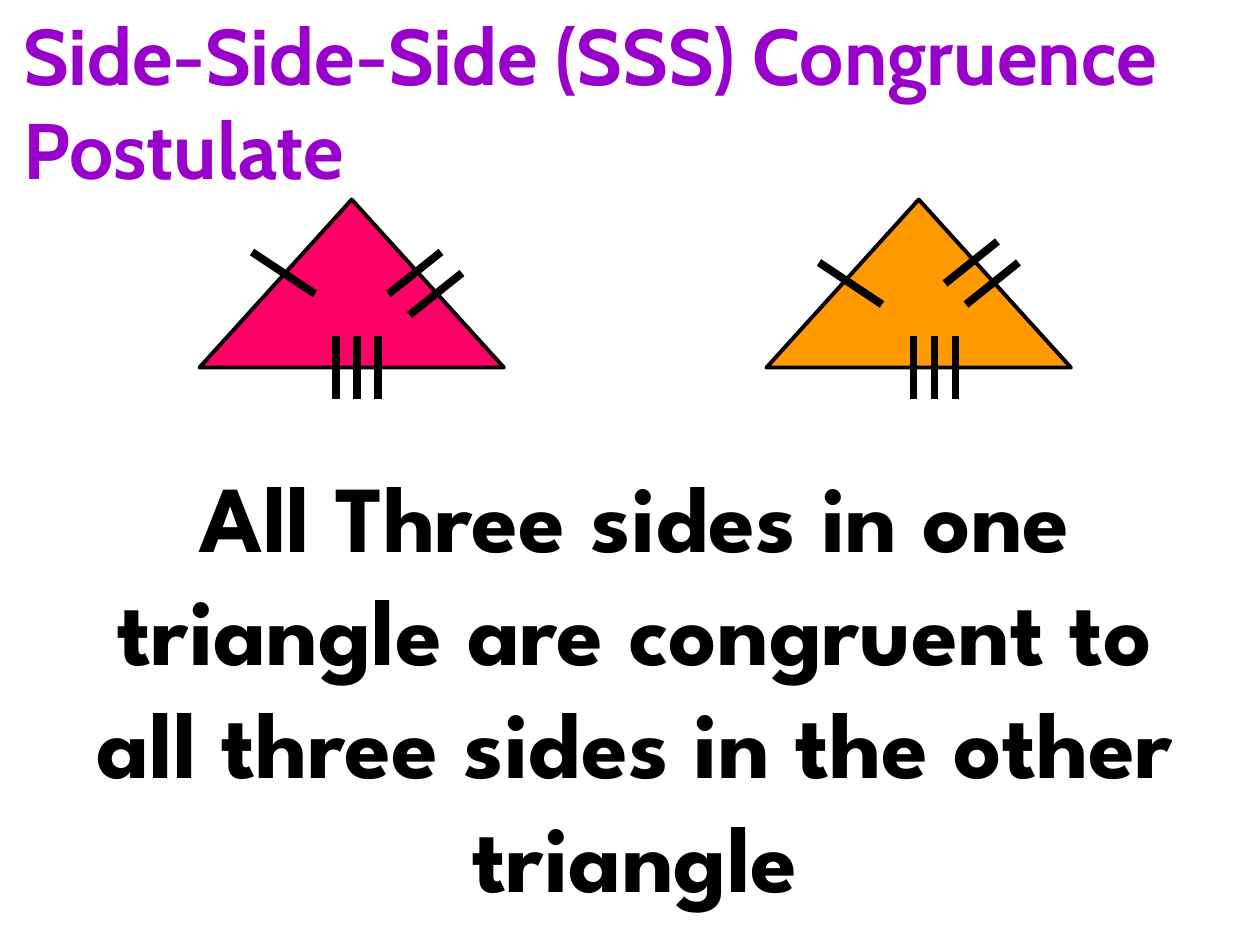
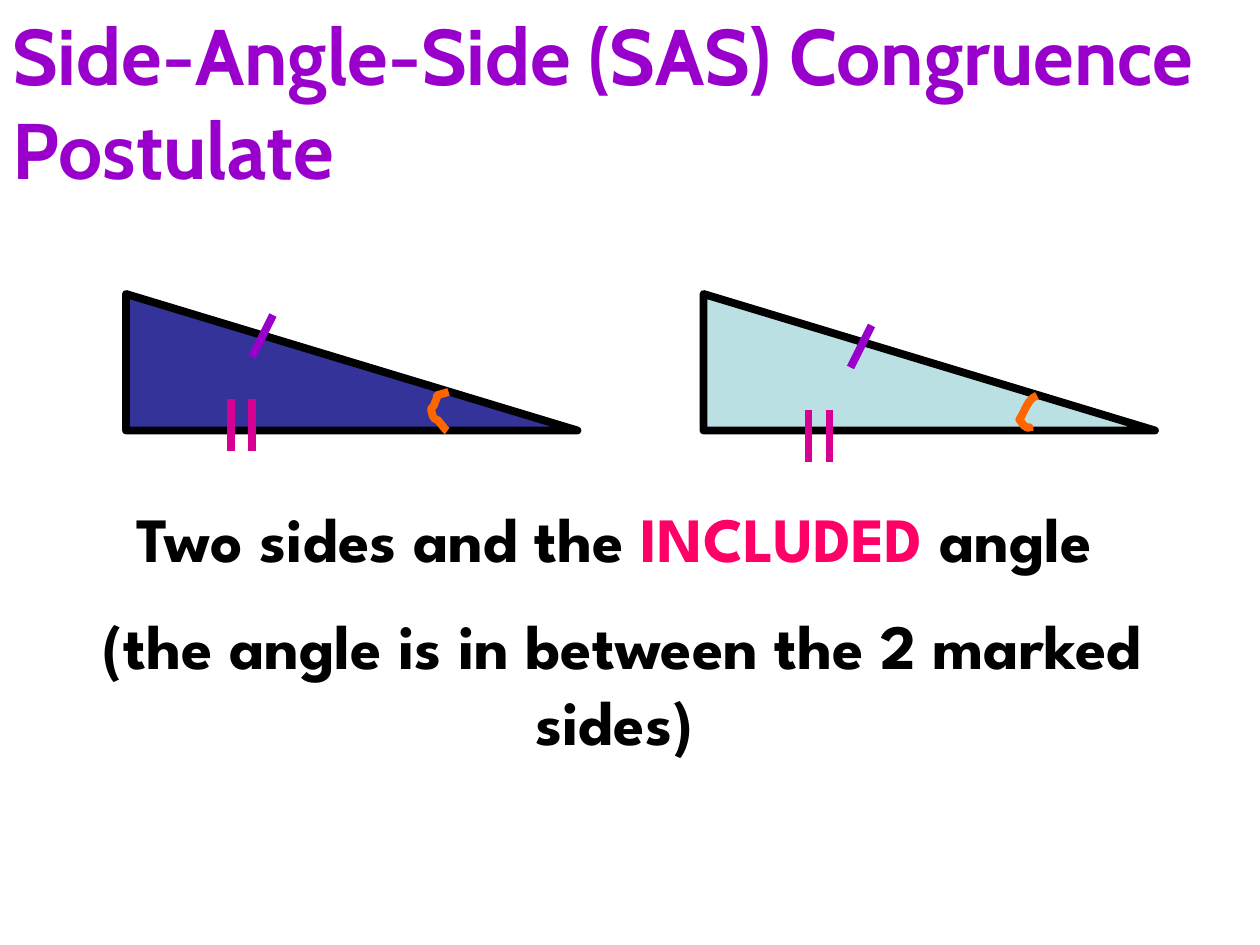
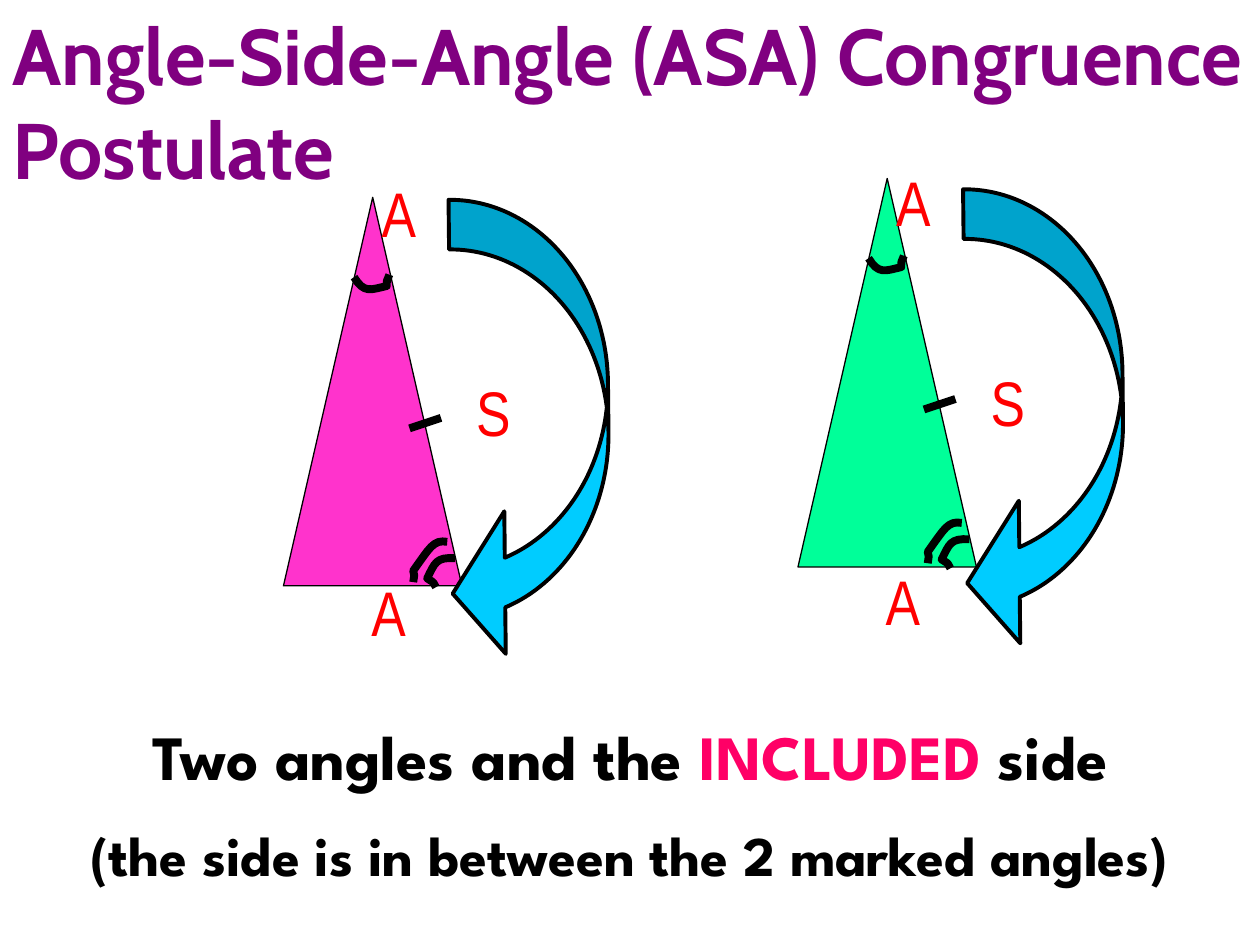
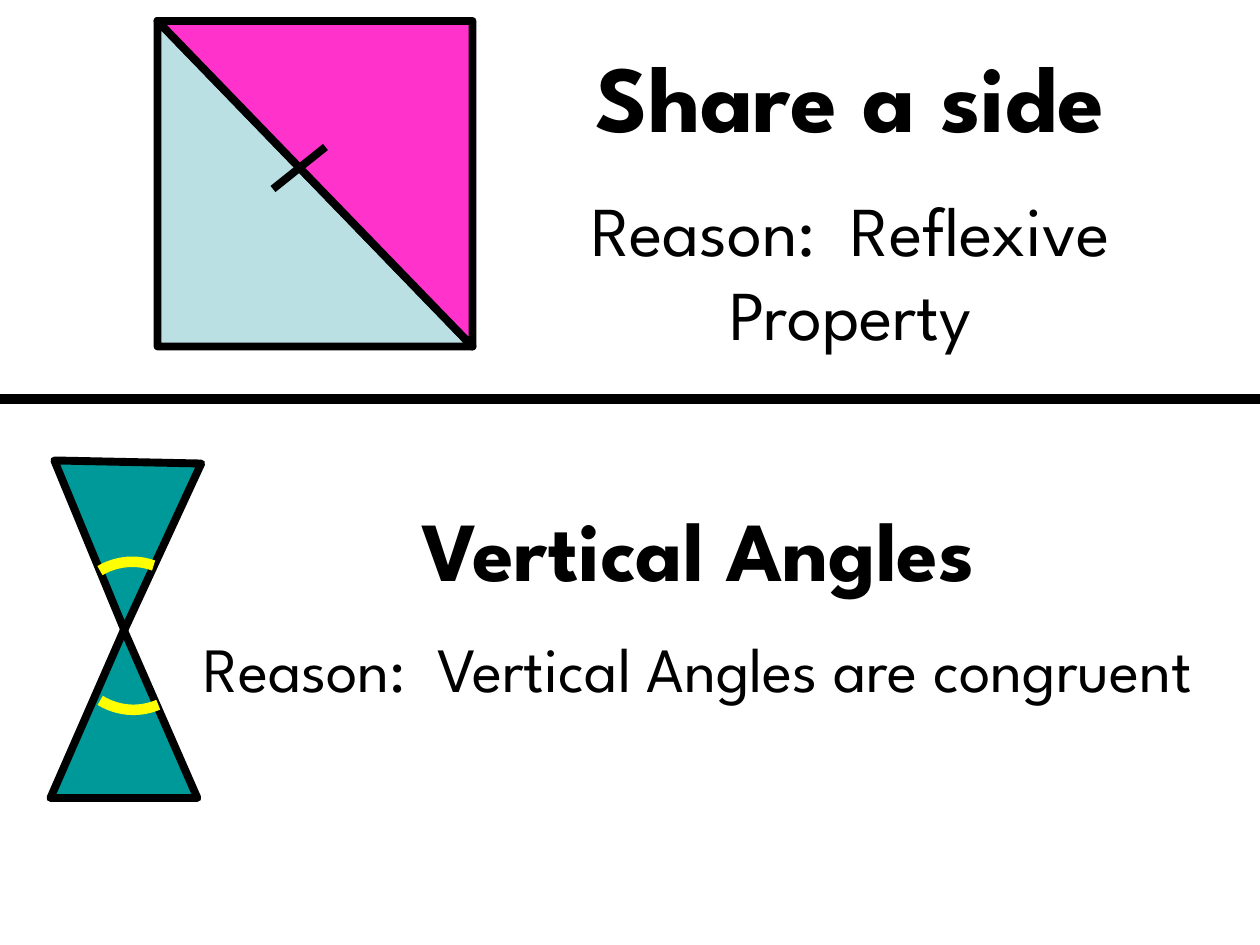
from dataclasses import dataclass

from lxml.etree import SubElement
from pptx import Presentation
from pptx.dml.color import RGBColor
from pptx.enum.shapes import MSO_CONNECTOR, MSO_SHAPE as Shape
from pptx.enum.text import MSO_ANCHOR as Anchor, MSO_AUTO_SIZE as AutoSize, PP_ALIGN as Align
from pptx.oxml import parse_xml
from pptx.oxml.ns import nsdecls, qn
from pptx.util import Inches, Pt

COLUMNS, ROWS = 120, 90  # the page grid: twelve cells to the inch
CURVE_STEPS = 8


@dataclass(frozen=True)
class Theme:
    ink: str = "000000"
    violet: str = "9900CC"
    purple: str = "800080"
    rose: str = "FF0066"
    amber: str = "FF9900"
    navy: str = "333399"
    ice: str = "BBE0E3"
    orange: str = "FF6600"
    magenta: str = "D60093"
    pink: str = "FF33CC"
    mint: str = "00FF99"
    sky: str = "00CCFF"
    red: str = "FF0000"
    teal: str = "009999"
    yellow: str = "FFFF00"
    title_font: str = "Cabin"
    body_font: str = "League Spartan"
    label_font: str = "Arial Narrow"
    title_size: float = 45
    huge: float = 54
    large: float = 48
    reason: float = 40
    body: float = 36
    small: float = 32
    hairline: float = 0.75
    outline: float = 2.25
    mark: float = 4.5
    heavy: float = 6


T = Theme()

# ---- Content: frames are (column, row, width, height) in grid cells ----
# A paragraph is (size, bold, [(words, colour), ...])
SSS = {
    "title": ("Side-Side-Side (SSS) Congruence Postulate", T.violet, (1, 0, 118, 19.2)),
    "text_frame": (5, 43, 111, 44.9),
    "text": [(T.huge, True, [("All Three sides in one triangle are congruent "
                              "to all three sides in the other triangle", T.ink)])],
    "triangles": [((19, 19, 29, 16), T.rose), ((73, 19, 29, 16), T.amber)],
    # start, reach, number of ticks, step between ticks, colour
    "ticks": [
        ((24, 24), (6, 4), 1, (0, 0), T.ink), ((78, 25), (6, 4), 1, (0, 0), T.ink),
        ((95, 23), (-5, 4), 2, (2, 2), T.ink), ((42, 24), (-5, 4), 2, (2, 2), T.ink),
        ((87, 32), (0, 6), 3, (2, 0), T.ink), ((32, 32), (0, 6), 3, (2, 0), T.ink),
    ],
}
SAS = {
    "title": ("Side-Angle-Side (SAS) Congruence Postulate", T.violet, (0, 0, 120, 19.2)),
    "text_frame": (7, 47, 103, 26.6),
    "text": [
        (T.body, True, [("Two sides and the ", T.ink), ("INCLUDED", T.rose), (" angle", T.ink)]),
        (T.body, True, [(" (the angle is in between the 2 marked sides)", T.ink)]),
    ],
    "triangles": [((12, 28, 43, 13), T.navy), ((67, 28, 43, 13), T.ice)],
    "ticks": [
        ((24, 34), (2, -4), 1, (0, 0), T.violet), ((81, 35), (2, -4), 1, (0, 0), T.violet),
        ((22, 38), (0, 5), 2, (2, 0), T.magenta), ((77, 39), (0, 5), 2, (2, 0), T.magenta),
    ],
    # Angle marks in inches: a start, then two controls and an end per bend
    "angles": [
        [(3.56, 3.11), (3.42, 3.16), (3.5, 3.1), (3.45, 3.2), (3.45, 3.22), (3.43, 3.23),
         (3.42, 3.25), (3.43, 3.27), (3.43, 3.3), (3.44, 3.31), (3.45, 3.33), (3.47, 3.33),
         (3.48, 3.34), (3.49, 3.35), (3.53, 3.41), (3.55, 3.42)],
        [(8.23, 3.14), (8.15, 3.17), (8.14, 3.26), (8.09, 3.33), (8.1, 3.34), (8.11, 3.36),
         (8.13, 3.38), (8.18, 3.42), (8.17, 3.36), (8.17, 3.42)],
    ],
}
ASA = {
    "title": ("Angle-Side-Angle (ASA) Congruence Postulate", T.purple, (0, 0, 120, 19.2)),
    "text_frame": (1, 67.7, 118, 18.1),
    "text": [
        (T.body, True, [("Two angles and the ", T.ink), ("INCLUDED", T.rose), (" side", T.ink)]),
        (T.small, True, [("(the side is in between the 2 marked angles)", T.ink)]),
    ],
    "triangle": (27, 18.8, 17, 37),
    "tick": ((39, 40.8), (3, -1)),
    "angles": [
        [(2.81, 2.2), (2.89, 2.33), (2.94, 2.3), (3.07, 2.27),
         (3.07, 2.21), (3.07, 2.24), (3.09, 2.18)],
        [(3.55, 4.3), (3.44, 4.28), (3.41, 4.35), (3.28, 4.53),
         (3.29, 4.58), (3.29, 4.55), (3.28, 4.62)],
        [(3.61, 4.43), (3.46, 4.42), (3.45, 4.47), (3.39, 4.59),
         (3.45, 4.63), (3.43, 4.61), (3.46, 4.66)],
    ],
    "arrow": (28.3, 33.6, 44.3, 15),
    "letters": [("A", 35, 16), ("A", 34, 54), ("S", 44, 35)],
    # fill, shift of the triangle, shift of the arrow and letters
    "figures": [(T.pink, (0, 0), (0, 0)), (T.mint, (49, -1.8), (49, -1))],
}
SHARED = {
    "square": (15, 2, 30, 31),
    "halves": [(T.ice, 0), (T.pink, 180)],
    "tick": ((26, 18), (5, -4)),
    "divider_row": 38,
    "texts": [
        ((47, 3, 68, 32.3), [(T.huge, True, [("Share a side", T.ink)]),
                             (T.reason, False, [("Reason:  Reflexive Property", T.ink)])]),
        ((18, 46.8, 97, 29), [(T.large, True, [("Vertical Angles", T.ink)]),
                              (T.body, False, [("Reason:  Vertical Angles are congruent", T.ink)])]),
    ],
    "triangles": [((5, 44, 14, 16), 181.2), ((4.8, 60, 14, 16), 0)],
    "arcs": [((6.6, 53.5, 12, 12), 310.2, (173.41, 203.8)),
             ((6.7, 55.6, 12, 12), 121.8, (182.99, 0))],
}


# ---- Shared helpers ----
def cells(values):
    return [Inches(value / 12) for value in values]


def shifted(frame, shift):
    return (frame[0] + shift[0], frame[1] + shift[1], *frame[2:])


def set_line(item, color, width):
    item.line.color.rgb = RGBColor.from_string(color)
    item.line.width = Pt(width)


def add_shape(shapes, kind, frame, fill, width, rotation=0, adjust=(), line=T.ink):
    shape = shapes.add_shape(kind, *cells(frame))
    shape.shadow.inherit = False
    shape.rotation = rotation
    for index, value in enumerate(adjust):
        shape.adjustments[index] = value
    if fill:
        shape.fill.solid()
        shape.fill.fore_color.rgb = RGBColor.from_string(fill)
    else:
        shape.fill.background()
    set_line(shape, line, width)


def add_line(shapes, start, reach, color=T.ink, width=T.mark):
    end = (start[0] + reach[0], start[1] + reach[1])
    line = shapes.add_connector(MSO_CONNECTOR.STRAIGHT, *cells((*start, *end)))
    set_line(line, color, width)
    SubElement(line._element.spPr, qn("a:effectLst"))


def add_ticks(shapes, ticks):
    for (column, row), reach, count, (right, down), color in ticks:
        for index in range(count):
            add_line(shapes, (column + index * right, row + index * down), reach, color)


def bend(points):
    """Sample a chain of cubic curves."""
    for first in range(0, len(points) - 1, 3):
        corners = points[first:first + 4]
        for step in range(1, CURVE_STEPS + 1):
            t = step / CURVE_STEPS
            weights = ((1 - t) ** 3, 3 * t * (1 - t) ** 2, 3 * t * t * (1 - t), t ** 3)
            yield tuple(sum(w * corner[axis] for w, corner in zip(weights, corners))
                        for axis in (0, 1))


def add_angle(shapes, points, color, shift=(0, 0)):
    right, down = cells(shift)

    def place(point):
        return Inches(point[0]) + right, Inches(point[1]) + down

    builder = shapes.build_freeform(*place(points[0]))
    builder.add_line_segments([place(point) for point in bend(points)], close=False)
    curve = builder.convert_to_shape()
    curve.shadow.inherit = False
    curve.fill.background()
    set_line(curve, color, T.mark)


def write(box, paragraphs, font, align, spaced=True, wrap=True):
    frame = box.text_frame
    layout = {"word_wrap": wrap, "vertical_anchor": Anchor.TOP,
              "auto_size": AutoSize.SHAPE_TO_FIT_TEXT if wrap else AutoSize.NONE}
    for name, value in layout.items():
        setattr(frame, name, value)
    for index, (size, bold, spans) in enumerate(paragraphs):
        para = frame.paragraphs[0] if index == 0 else frame.add_paragraph()
        para.alignment = align
        if spaced:
            before = SubElement(para._p.get_or_add_pPr(), qn("a:spcBef"))
            SubElement(before, qn("a:spcPct"), val="50000")
        for words, color in spans:
            span = para.add_run()
            span.text = words
            for name, value in {"name": font, "size": Pt(size), "bold": bold}.items():
                setattr(span.font, name, value)
            span.font.color.rgb = RGBColor.from_string(color)


def add_text(shapes, frame, paragraphs):
    write(shapes.add_textbox(*cells(frame)), paragraphs, T.body_font, Align.CENTER)


def add_letter(shapes, letter, frame):
    box = shapes.add_textbox(*cells(frame))
    write(box, [(T.body, False, [(letter, T.red)])], T.label_font, Align.CENTER,
          spaced=False, wrap=False)
    outline = parse_xml(f'<a:ln {nsdecls("a")} w="{Pt(T.hairline)}"><a:solidFill>'
                        f'<a:srgbClr val="{T.ink}"/></a:solidFill></a:ln>')
    box.text_frame.paragraphs[0].runs[0].font._element.insert(0, outline)


def add_titled_page(deck, content):
    page = deck.slides.add_slide(deck.slide_layouts[5])
    words, color, frame = content["title"]
    title = page.shapes.title
    for name, value in zip(("left", "top", "width", "height"), cells(frame)):
        setattr(title, name, value)
    write(title, [(T.title_size, True, [(words, color)])], T.title_font, Align.LEFT)
    return page.shapes


# ---- Pages ----
def build_side_page(deck, content, kind, width):
    shapes = add_titled_page(deck, content)
    for frame, fill in content["triangles"]:
        add_shape(shapes, kind, frame, fill, width)
    for points in content.get("angles", []):
        add_angle(shapes, points, T.orange)
    add_ticks(shapes, content["ticks"])
    add_text(shapes, content["text_frame"], content["text"])


def build_angle_page(deck):
    shapes = add_titled_page(deck, ASA)
    start, reach = ASA["tick"]
    for fill, shift, _ in ASA["figures"]:
        figure = shapes.add_group_shape().shapes
        add_shape(figure, Shape.ISOSCELES_TRIANGLE, shifted(ASA["triangle"], shift),
                  fill, T.hairline)
        for points in ASA["angles"]:
            add_angle(figure, points, T.ink, shift)
        add_line(figure, shifted(start, shift), reach)
    add_text(shapes, ASA["text_frame"], ASA["text"])
    for _, _, shift in ASA["figures"]:
        guide = shapes.add_group_shape().shapes
        add_shape(guide, Shape.CURVED_DOWN_ARROW, shifted(ASA["arrow"], shift), T.sky,
                  T.outline, 89.4, (0.315, 0.905, 0.333))
        for letter, column, row in ASA["letters"]:
            add_letter(guide, letter, shifted((column, row, 6, 9), shift))


def build_shared_page(deck):
    shapes = deck.slides.add_slide(deck.slide_layouts[6]).shapes
    # Two triangles with a common side
    square = shapes.add_group_shape().shapes
    for fill, rotation in SHARED["halves"]:
        add_shape(square, Shape.RIGHT_TRIANGLE, SHARED["square"], fill, T.mark, rotation)
    add_line(square, *SHARED["tick"])
    # Two triangles meeting at a point
    for frame, rotation in SHARED["triangles"]:
        add_shape(shapes, Shape.ISOSCELES_TRIANGLE, frame, T.teal, T.mark, rotation)
    for frame, paragraphs in SHARED["texts"]:
        add_text(shapes, frame, paragraphs)
    add_line(shapes, (0, SHARED["divider_row"]), (COLUMNS, 0), width=T.heavy)
    for frame, rotation, adjust in SHARED["arcs"]:
        add_shape(shapes, Shape.ARC, frame, None, T.heavy, rotation, adjust, T.yellow)


def main():
    deck = Presentation()
    deck.slide_width, deck.slide_height = cells((COLUMNS, ROWS))
    build_side_page(deck, SSS, Shape.ISOSCELES_TRIANGLE, T.outline)
    build_side_page(deck, SAS, Shape.RIGHT_TRIANGLE, T.mark)
    build_angle_page(deck)
    build_shared_page(deck)
    deck.save("out.pptx")


if __name__ == "__main__":
    main()
